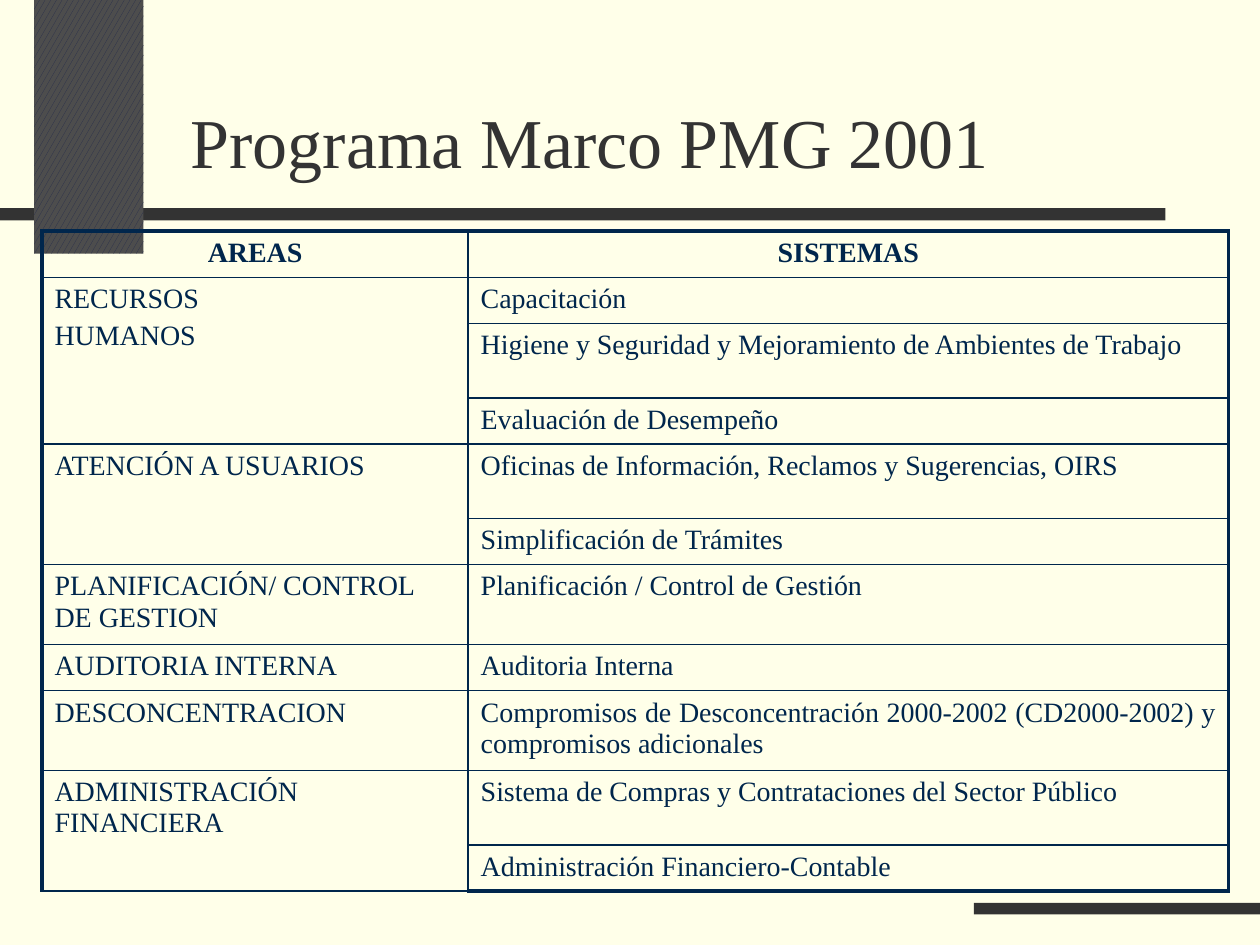
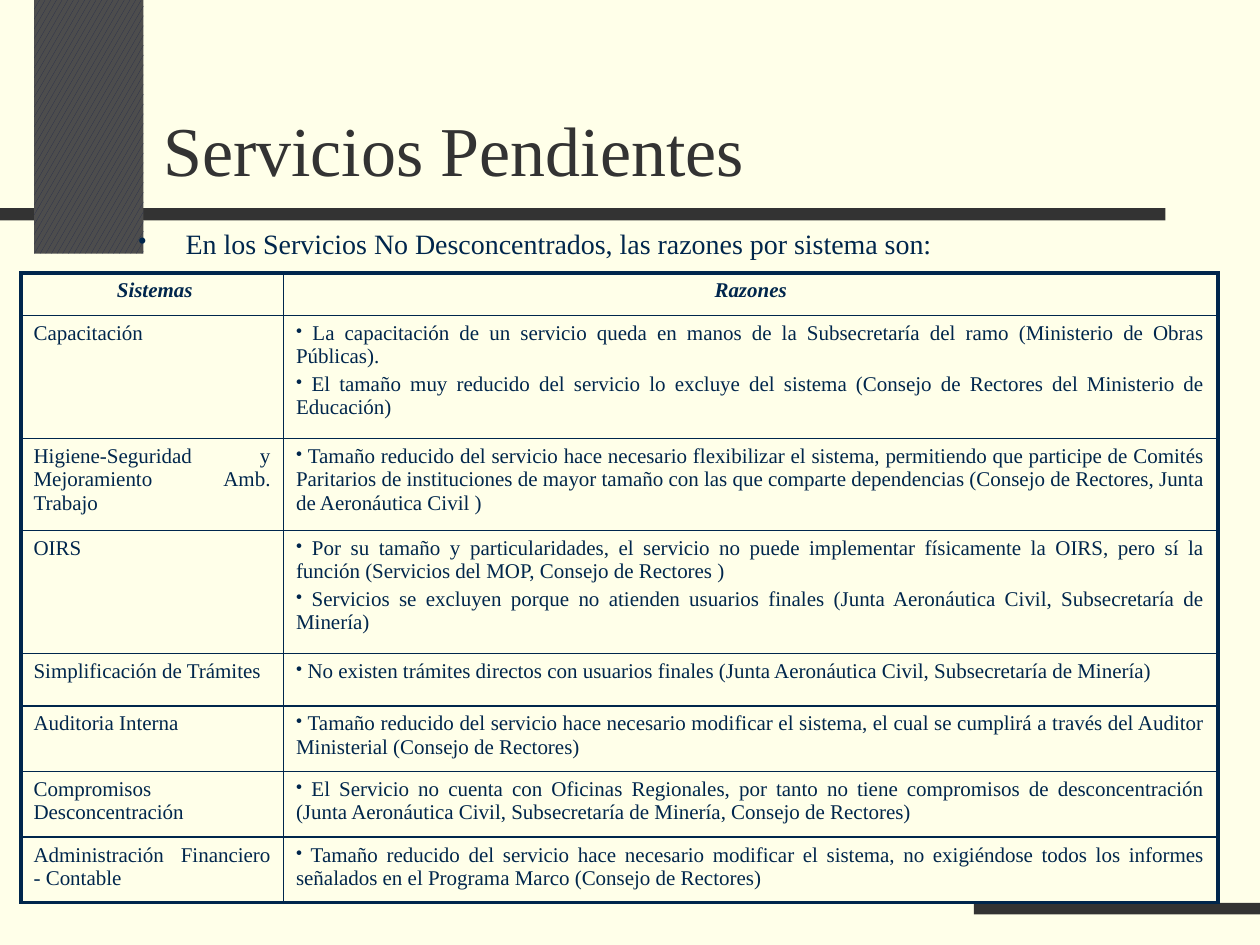
from lxml import etree
from pptx import Presentation
from pptx.dml.color import RGBColor
from pptx.enum.dml import MSO_PATTERN
from pptx.enum.shapes import MSO_SHAPE
from pptx.enum.text import MSO_ANCHOR, PP_ALIGN
from pptx.oxml.ns import qn
from pptx.util import Pt

RECT = MSO_SHAPE.RECTANGLE
CONFETTI = MSO_PATTERN.LARGE_CONFETTI
TOP, BOTTOM = MSO_ANCHOR.TOP, MSO_ANCHOR.BOTTOM
LEFT, CENTER, JUSTIFY = PP_ALIGN.LEFT, PP_ALIGN.CENTER, PP_ALIGN.JUSTIFY

CREAM = RGBColor(0xFF, 0xFF, 0xE9)
DARK = RGBColor(0x33, 0x33, 0x33)
GRAY = RGBColor(0x4D, 0x4D, 0x4D)
INK = RGBColor(0x26, 0x2D, 0x4C)
NAVY = RGBColor(0x00, 0x26, 0x4C)
FONT = "Times New Roman"
THICK, THIN = 2.25, 1

AREAS = [
    (["RECURSOS", "HUMANOS"], [
        "Capacitación",
        "Higiene y Seguridad y Mejoramiento de Ambientes de Trabajo",
        "Evaluación de Desempeño"]),
    (["ATENCIÓN A USUARIOS"], [
        "Oficinas de Información, Reclamos y Sugerencias, OIRS",
        "Simplificación de Trámites"]),
    (["PLANIFICACIÓN/ CONTROL DE GESTION"], ["Planificación / Control de Gestión"]),
    (["AUDITORIA INTERNA"], ["Auditoria Interna"]),
    (["DESCONCENTRACION"], [
        "Compromisos de Desconcentración 2000-2002 (CD2000-2002) y compromisos adicionales"]),
    (["ADMINISTRACIÓN FINANCIERA"], [
        "Sistema de Compras y Contrataciones del Sector Público",
        "Administración Financiero-Contable"]),
]

REASONS = [
    ("Capacitación", [
        "La capacitación de un servicio queda en manos de la Subsecretaría del ramo "
        "(Ministerio de Obras Públicas).",
        "El tamaño muy reducido del servicio lo excluye del sistema "
        "(Consejo de Rectores del Ministerio de Educación)"]),
    ("Higiene-Seguridad y Mejoramiento Amb. Trabajo", [
        "Tamaño reducido del servicio hace necesario flexibilizar el sistema, permitiendo que "
        "participe de Comités Paritarios de instituciones de mayor tamaño con las que comparte "
        "dependencias (Consejo de Rectores, Junta de Aeronáutica Civil )"]),
    ("OIRS", [
        "Por su tamaño y particularidades, el servicio no puede implementar físicamente la OIRS, "
        "pero sí la función (Servicios del MOP, Consejo de Rectores )",
        "Servicios se excluyen porque no atienden usuarios finales "
        "(Junta Aeronáutica Civil, Subsecretaría de Minería)"]),
    ("Simplificación de Trámites", [
        "No existen trámites directos con usuarios finales "
        "(Junta Aeronáutica Civil, Subsecretaría de Minería)"]),
    ("Auditoria Interna", [
        "Tamaño reducido del servicio hace necesario modificar el sistema, el cual se cumplirá "
        "a través del Auditor Ministerial (Consejo de Rectores)"]),
    ("Compromisos Desconcentración", [
        "El Servicio no cuenta con Oficinas Regionales, por tanto no tiene compromisos de "
        "desconcentración (Junta Aeronáutica Civil, Subsecretaría de Minería, "
        "Consejo de Rectores)"]),
    ("Administración Financiero - Contable", [
        "Tamaño reducido del servicio hace necesario modificar el sistema, no exigiéndose todos "
        "los informes señalados en el Programa Marco (Consejo de Rectores)"]),
]


def add_dot(para, hang):
    props = para._p.get_or_add_pPr()
    props.set("marL", str(Pt(hang)))
    props.set("indent", str(-Pt(hang)))
    etree.SubElement(props, qn("a:buSzPct")).set("val", "85000")
    etree.SubElement(props, qn("a:buChar")).set("char", "•")


def write(frame, lines, size=16, color=NAVY, align=LEFT, bold=False, italic=False,
          dots=False, hang=0):
    for i, line in enumerate(lines):
        para = frame.add_paragraph() if i else frame.paragraphs[0]
        if dots:
            add_dot(para, hang)
        para.alignment = align
        para.space_before = Pt(0.2 * size if i else 0)
        run = para.add_run()
        run.text = line
        font = run.font
        font.name, font.size, font.bold, font.italic = FONT, Pt(size), bold, italic
        font.color.rgb = color


def add_text(slide, box, lines, anchor=TOP, **style):
    frame = slide.shapes.add_textbox(*map(Pt, box)).text_frame
    frame.word_wrap = True
    frame.vertical_anchor = anchor
    write(frame, lines, **style)


def add_bar(slide, box):
    bar = slide.shapes.add_shape(RECT, *map(Pt, box))
    bar.shadow.inherit = False
    bar.line.fill.background()
    bar.fill.solid()
    bar.fill.fore_color.rgb = DARK
    return bar


def add_base(deck, title, box):
    slide = deck.slides.add_slide(deck.slide_layouts[6])
    slide.background.fill.solid()
    slide.background.fill.fore_color.rgb = CREAM
    add_bar(slide, (0, 119, 666, 7))
    block = add_bar(slide, (19.5, 0, 62.5, 145))
    block.fill.patterned()
    block.fill.pattern = CONFETTI
    block.fill.fore_color.rgb = INK
    block.fill.back_color.rgb = GRAY
    add_bar(slide, (556.5, 516, 163.5, 6.5))
    add_text(slide, box, [title], anchor=BOTTOM, size=40, color=DARK)
    return slide


def add_edge(cell, side, width):
    line = etree.SubElement(cell._tc.get_or_add_tcPr(), qn("a:ln" + side))
    line.set("w", str(Pt(width)))
    fill = etree.SubElement(line, qn("a:solidFill"))
    etree.SubElement(fill, qn("a:srgbClr")).set("val", str(NAVY))


def add_grid(slide, left, top, cols, rows):
    frame = slide.shapes.add_table(len(rows), len(cols), Pt(left), Pt(top),
                                   Pt(sum(cols)), Pt(sum(rows)))
    grid = frame.table
    grid.first_row = grid.horz_banding = False
    for col, width in zip(grid.columns, cols):
        col.width = Pt(width)
    for row, height in zip(grid.rows, rows):
        row.height = Pt(height)
    for r in range(len(rows)):
        for c in range(len(cols)):
            cell = grid.cell(r, c)
            outer = {"L": c == 0, "R": c == len(cols) - 1,
                     "T": r == 0, "B": r == len(rows) - 1}
            for side, edge in outer.items():
                add_edge(cell, side, THICK if edge else THIN)
            cell.fill.background()
    return grid


def fill_cell(grid, row, col, lines, **style):
    write(grid.cell(row, col).text_frame, lines, **style)


def add_heads(grid, heads, **style):
    for col, head in enumerate(heads):
        fill_cell(grid, 0, col, [head], align=CENTER, bold=True, **style)


def add_frame(deck):
    slide = add_base(deck, "Programa Marco PMG 2001", (102, 18, 582, 90))
    low, high = 25.1, 42.5
    rows = [low, 26.3, high, low, high, low, high, low, high, high, low]
    grid = add_grid(slide, 24, 132, (243.5, 434.5), rows)
    add_heads(grid, ("AREAS", "SISTEMAS"))
    row = 1
    for area, systems in AREAS:
        last = row + len(systems) - 1
        if last > row:
            grid.cell(row, 0).merge(grid.cell(last, 0))
        fill_cell(grid, row, 0, area)
        for i, system in enumerate(systems):
            fill_cell(grid, row + i, 1, [system], align=JUSTIFY)
        row = last + 1


def add_pending(deck):
    slide = add_base(deck, "Servicios Pendientes", (86.25, 22.5, 618, 90))
    add_text(slide, (72, 126, 618, 48),
             ["En los Servicios No Desconcentrados, las razones por sistema son:"],
             align=JUSTIFY, dots=True, hang=27)
    rows = [24.3, 70.4, 52.5, 70.4, 29.8, 37.5, 37.5, 37.5]
    grid = add_grid(slide, 12, 156, (150, 534), rows)
    add_heads(grid, (" Sistemas", "Razones"), size=12, italic=True)
    for row, (system, causes) in enumerate(REASONS, 1):
        fill_cell(grid, row, 0, [system], size=12, align=JUSTIFY)
        fill_cell(grid, row, 1, [" " + cause for cause in causes],
                  size=12, align=JUSTIFY, dots=True)


def main():
    deck = Presentation()
    deck.slide_width, deck.slide_height = Pt(720), Pt(540)
    add_frame(deck)
    add_pending(deck)
    deck.save("out.pptx")


if __name__ == "__main__":
    main()
